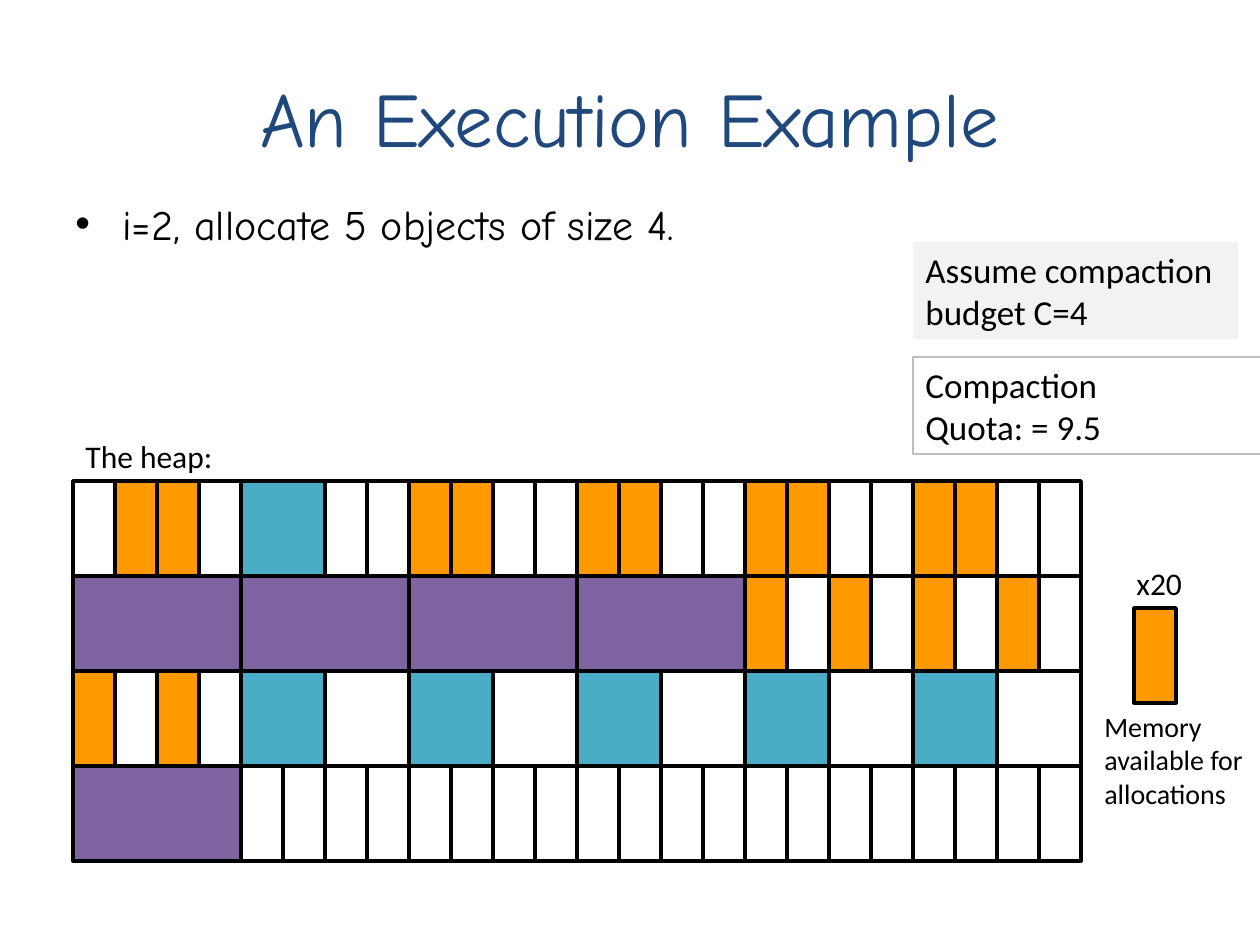
from lxml.etree import SubElement
from pptx import Presentation
from pptx.dml.color import RGBColor
from pptx.enum.shapes import MSO_SHAPE
from pptx.enum.text import MSO_ANCHOR, MSO_AUTO_SIZE, PP_ALIGN
from pptx.oxml.ns import qn
from pptx.util import Emu, Pt

SCALE = 914400 // 126
BLACK, WHITE, ORANGE = "000000", "FFFFFF", "FF9900"
KINDS = {
    "w": (1, WHITE),
    "o": (1, ORANGE),
    "E": (2, WHITE),
    "B": (2, "4BACC6"),
    "P": (4, "8064A2"),
}
ROWS = ["woowB" + "wwoo" * 4 + "ww", "PPPP" + "ow" * 4, "owow" + "BE" * 5, "P" + "w" * 20]
CELL, HIGH = 42, 95


def px(*nums):
    return [Emu(n * SCALE) for n in nums]


def paint(part, color):
    part.solid()
    part.fore_color.rgb = RGBColor.from_string(color)


def edge(shape, color, width):
    paint(shape.line.fill, color)
    shape.line.width = Pt(width)


def block(slide, box, color):
    shape = slide.shapes.add_shape(MSO_SHAPE.RECTANGLE, *px(*box))
    shape.shadow.inherit = False
    paint(shape.fill, color)
    edge(shape, BLACK, 2)


def bullet(par, indent):
    props = par._p.get_or_add_pPr()
    width = px(indent)[0]
    props.set("marL", str(width))
    props.set("indent", str(-width))
    SubElement(props, qn("a:buFont")).set("typeface", "Arial")
    SubElement(props, qn("a:buChar")).set("char", "•")


def write(slide, box, text, size=18, font="Calibri", color=BLACK, align=PP_ALIGN.LEFT,
          anchor=MSO_ANCHOR.TOP, fill=None, line=None, indent=0, before=0, grow=True):
    shape = slide.shapes.add_textbox(*px(*box))
    frame = shape.text_frame
    frame.word_wrap = True
    frame.auto_size = MSO_AUTO_SIZE.SHAPE_TO_FIT_TEXT if grow else MSO_AUTO_SIZE.NONE
    frame.vertical_anchor = anchor
    frame.text = text
    for par in frame.paragraphs:
        par.alignment = align
        par.space_before = Pt(before)
        par.font.size = Pt(size)
        par.font.name = font
        paint(par.font.fill, color)
        if indent:
            bullet(par, indent)
    if fill:
        paint(shape.fill, fill)
    if line:
        edge(shape, line, 0.75)


def header(slide, x, y):
    write(slide, (x, y, 1134, 158), "An Execution Example", size=44, font="Comic Neue",
          color="1F497D", align=PP_ALIGN.CENTER, anchor=MSO_ANCHOR.MIDDLE, grow=False)
    write(slide, (x, y + 154, 1097, 223), "i=2, allocate 5 objects of size 4.", size=24,
          font="Comic Neue", indent=47, before=4.8, grow=False)


def budget(slide, x, y):
    write(slide, (x, y, 325, 97), "Assume compaction budget C=4", size=20, fill="F2F2F2")
    write(slide, (x, y + 115, 358, 97), "Compaction\nQuota: = 9.5", size=20,
          fill=WHITE, line="BFBFBF")


def heap(slide, x, y):
    write(slide, (x, y, 325, 50), "The heap:")
    for row, kinds in enumerate(ROWS):
        left = x
        for kind in kinds:
            span, color = KINDS[kind]
            block(slide, (left, y + 50 + row * HIGH, span * CELL, HIGH), color)
            left += span * CELL


def legend(slide, x, y):
    write(slide, (x + 32, y, 84, 50), "x20")
    block(slide, (x + 42, y + 50, CELL, HIGH), ORANGE)
    write(slide, (x, y + 145, 168, 115), "Memory available for allocations", size=16)


def main():
    deck = Presentation()
    deck.slide_width, deck.slide_height = px(1260, 945)
    slide = deck.slides.add_slide(deck.slide_layouts[6])
    header(slide, 63, 38)
    budget(slide, 913, 242)
    heap(slide, 73, 431)
    legend(slide, 1092, 558)
    deck.save("out.pptx")


if __name__ == "__main__":
    main()
